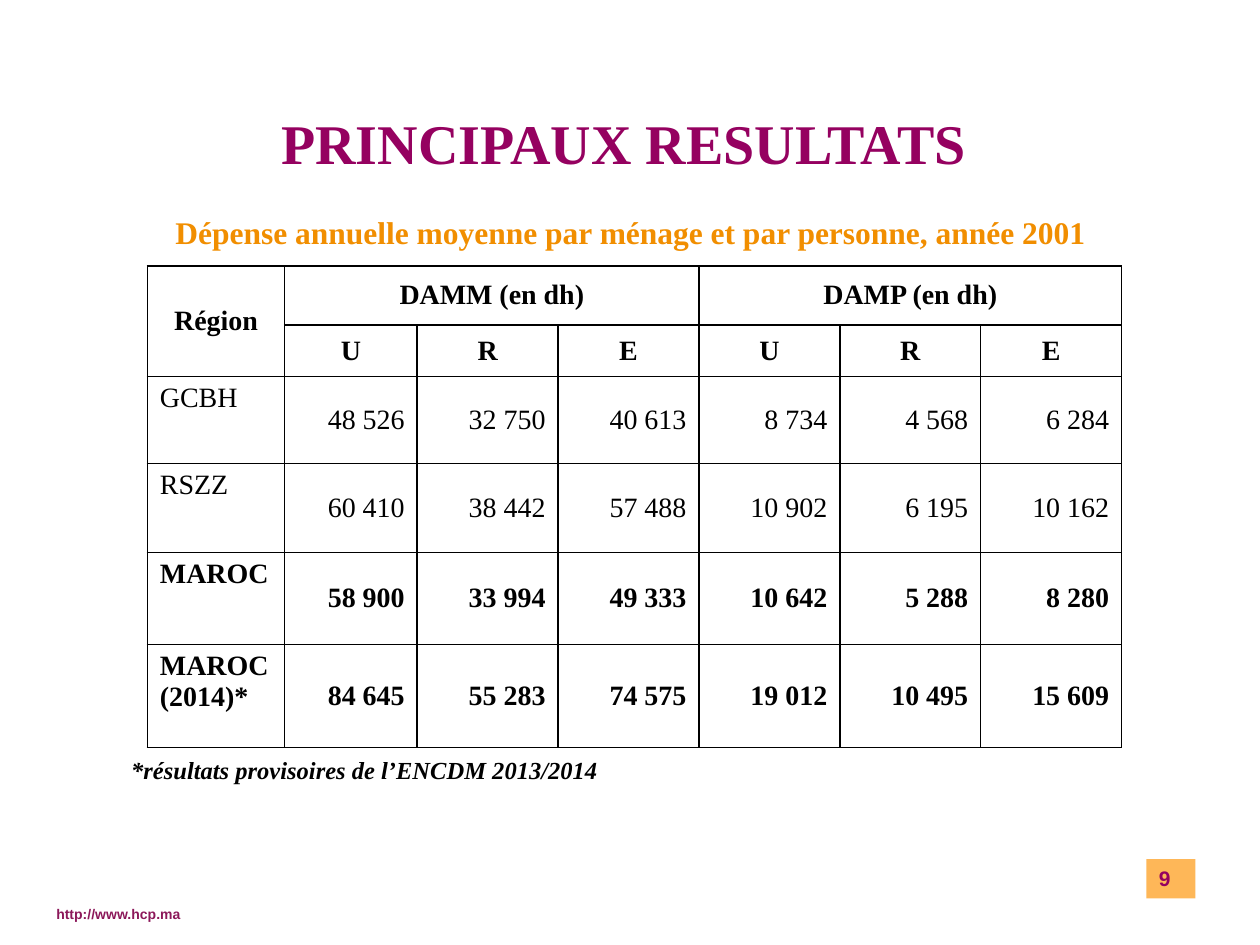
"""Build the slide of mean yearly spending per household and per person."""
from dataclasses import dataclass
from typing import Optional

from lxml import etree
from pptx import Presentation
from pptx.dml.color import RGBColor
from pptx.enum.shapes import MSO_SHAPE
from pptx.enum.text import MSO_ANCHOR, MSO_AUTO_SIZE, PP_ALIGN
from pptx.oxml.ns import qn
from pptx.util import Cm, Pt

LEFT, CENTER, RIGHT = PP_ALIGN.LEFT, PP_ALIGN.CENTER, PP_ALIGN.RIGHT
TOP, MIDDLE, BOTTOM = MSO_ANCHOR.TOP, MSO_ANCHOR.MIDDLE, MSO_ANCHOR.BOTTOM
NO_FIT = MSO_AUTO_SIZE.NONE
RECT = MSO_SHAPE.RECTANGLE

SERIF, SANS = "Times New Roman", "Arial"
COLORS = {
    "black": "000000",
    "plum": "950160",
    "footer": "8C185A",
    "orange": "F18E00",
    "badge": "FEB758",
}
COL_WIDTHS = [2.77, 2.67] + [2.84] * 5
ROW_HEIGHTS = [1.19, 1.04, 1.75, 1.8, 1.85, 2.08]


@dataclass
class Style:
    size: float
    color: str = "black"
    bold: bool = True
    italic: bool = False
    font: str = SERIF
    align: Optional[PP_ALIGN] = CENTER


@dataclass
class Region:
    name: str
    values: list[int]
    bold: bool = False


REGIONS = [
    Region("GCBH", [48526, 32750, 40613, 8734, 4568, 6284]),
    Region("RSZZ", [60410, 38442, 57488, 10902, 6195, 10162]),
    Region("MAROC", [58900, 33994, 49333, 10642, 5288, 8280], True),
    Region("MAROC\n(2014)*", [84645, 55283, 74575, 19012, 10495, 15609], True),
]


def rgb(name: str) -> RGBColor:
    """Return the named colour."""
    return RGBColor.from_string(COLORS[name])


def style_paragraph(p, style: Style) -> None:
    """Apply a text style to one paragraph."""
    p.alignment = style.align
    p.font.name = style.font
    p.font.size = Pt(style.size)
    p.font.bold = style.bold
    p.font.italic = style.italic
    p.font.color.rgb = rgb(style.color)


def write(tf, text: str, style: Style) -> None:
    """Fill a text frame with styled paragraphs, one a line."""
    tf.text = text
    for p in tf.paragraphs:
        style_paragraph(p, style)


def place(s, left: float, top: float, width: float, height: float) -> None:
    """Move and size a shape, in centimetres."""
    s.left, s.top, s.width, s.height = Cm(left), Cm(top), Cm(width), Cm(height)


def set_borders(cell) -> None:
    """Draw thin black lines on all sides of a cell."""
    tc_pr = cell._tc.get_or_add_tcPr()
    for side in ("a:lnL", "a:lnR", "a:lnT", "a:lnB"):
        ln = etree.SubElement(tc_pr, qn(side), w=str(Pt(1)))
        fill = etree.SubElement(ln, qn("a:solidFill"))
        etree.SubElement(fill, qn("a:srgbClr"), val=COLORS["black"])


def write_cell(cell, text: str, align: PP_ALIGN, bold: bool = True,
               anchor: MSO_ANCHOR = MIDDLE) -> None:
    """Write one table cell."""
    write(cell.text_frame, text, Style(16, bold=bold, align=align))
    cell.vertical_anchor = anchor


def add_spending_table(slide) -> None:
    """Add the table of spending by region."""
    frame = slide.shapes.add_table(
        len(ROW_HEIGHTS), len(COL_WIDTHS), Cm(2.97), Cm(5.36),
        Cm(sum(COL_WIDTHS)), Cm(sum(ROW_HEIGHTS)))
    table = frame.table
    for col, width in zip(table.columns, COL_WIDTHS):
        col.width = Cm(width)
    for row, height in zip(table.rows, ROW_HEIGHTS):
        row.height = Cm(height)
    for cell in table.iter_cells():
        set_borders(cell)
        cell.fill.background()

    table.cell(0, 0).merge(table.cell(1, 0))
    write_cell(table.cell(0, 0), "Région", CENTER)
    for col, heading in ((1, "DAMM (en dh)"), (4, "DAMP (en dh)")):
        table.cell(0, col).merge(table.cell(0, col + 2))
        write_cell(table.cell(0, col), heading, CENTER)
        for i, area in enumerate("URE"):
            write_cell(table.cell(1, col + i), area, CENTER)
    for row, region in enumerate(REGIONS, 2):
        write_cell(table.cell(row, 0), region.name, LEFT, region.bold, TOP)
        for col, value in enumerate(region.values, 1):
            text = f"{value:,}".replace(",", " ")
            write_cell(table.cell(row, col), text, RIGHT, region.bold)


def add_titles(slide) -> None:
    """Fill the title and the subtitle with its table note."""
    title, subtitle = slide.placeholders
    place(title, 1.78, 1.78, 21.59, 2.18)
    tf = title.text_frame
    tf.auto_size, tf.vertical_anchor = NO_FIT, MIDDLE
    write(tf, "PRINCIPAUX RESULTATS", Style(32, "plum"))

    place(subtitle, 2.39, 4.17, 20.65, 14.1)
    tf = subtitle.text_frame
    tf.auto_size, tf.vertical_anchor = NO_FIT, TOP
    tf.text = ("Dépense annuelle moyenne par ménage et par personne, année 2001\n"
               "*résultats provisoires de l’ENCDM 2013/2014")
    caption, note = tf.paragraphs
    style_paragraph(caption, Style(18, "orange"))
    style_paragraph(note, Style(14, italic=True, align=LEFT))
    caption.space_before, note.space_before = Pt(0), Pt(288)


def add_footer(slide) -> None:
    """Add the web address and the page number."""
    s = slide.shapes.add_textbox(Cm(0.69), Cm(18.14), Cm(3.4), Cm(0.58))
    tf = s.text_frame
    tf.word_wrap, tf.vertical_anchor = True, BOTTOM
    write(tf, "http://www.hcp.ma", Style(8, "footer", font=SANS))

    s = slide.shapes.add_shape(RECT, Cm(23.11), Cm(17.32), Cm(0.99), Cm(0.79))
    s.shadow.inherit = False
    s.fill.solid()
    s.fill.fore_color.rgb = rgb("badge")
    s.line.fill.background()
    s.text_frame.vertical_anchor = TOP
    write(s.text_frame, "9", Style(12, "plum", font=SANS, align=LEFT))


def main() -> None:
    """Build and save the presentation."""
    prs = Presentation()
    prs.slide_width, prs.slide_height = Cm(25.4), Cm(19.05)
    slide = prs.slides.add_slide(prs.slide_layouts[0])
    add_titles(slide)
    add_spending_table(slide)
    add_footer(slide)
    prs.save("out.pptx")


if __name__ == "__main__":
    main()
